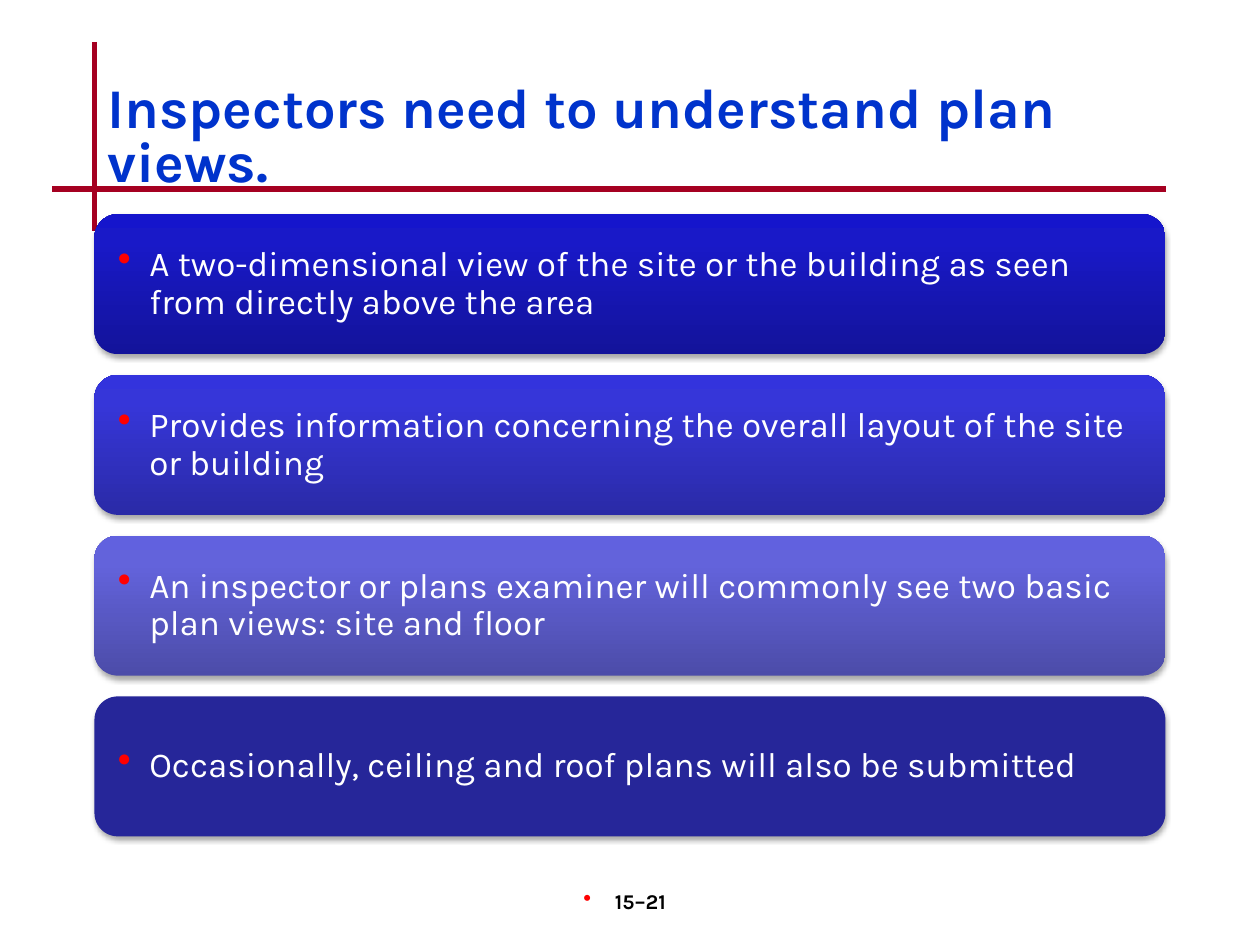
import lxml.etree
import pptx
import pptx.dml.color
import pptx.enum.shapes
import pptx.enum.text
import pptx.oxml
import pptx.oxml.ns
import pptx.util

Pt = pptx.util.Pt
ALIGN = pptx.enum.text.PP_ALIGN
ANCHOR = pptx.enum.text.MSO_ANCHOR
NAMESPACE = pptx.oxml.ns.nsdecls("a")

FONT = "Karla"
RULE_RED = "A50021"
BULLET_RED = "FF0000"
LEFT, WIDTH = 54, 612
CARD_TOP, CARD_HEIGHT, CARD_PITCH = 122.4, 80, 91.85

# Each card has its text and its colours from bottom to top.
CARDS = [
    ("A two-dimensional view of the site or the building as seen from directly above the area",
     ["13139A", "1919C8", "1515CC"]),
    ("Provides information concerning the overall layout of the site or building",
     ["2A2AA7", "3636D9", "3333DD"]),
    ("An inspector or plans examiner will commonly see two basic plan views: site and floor",
     ["4C4CA9", "6363DB", "6161DF"]),
    ("Occasionally, ceiling and roof plans will also be submitted", ["262699"]),
]


def rgb(value):
    return pptx.dml.color.RGBColor.from_string(value)


def add_bullet(para, indent):
    properties = para._p.get_or_add_pPr()
    properties.set("marL", str(Pt(indent)))
    properties.set("indent", str(-Pt(indent)))
    for xml in (
        f'<a:buClr {NAMESPACE}><a:srgbClr val="{BULLET_RED}"/></a:buClr>',
        f'<a:buSzPct {NAMESPACE} val="110000"/>',
        f'<a:buChar {NAMESPACE} char="•"/>',
    ):
        properties.append(pptx.oxml.parse_xml(xml))


def write_text(shape, text, size, color, bold=False, align=ALIGN.LEFT,
               anchor=ANCHOR.TOP, spacing=None, bullet_indent=None,
               margins=(7.2, 3.6)):
    """Fill a shape with one paragraph; margins are horizontal and vertical."""
    frame = shape.text_frame
    frame.word_wrap = True
    frame.auto_size = pptx.enum.text.MSO_AUTO_SIZE.NONE
    frame.vertical_anchor = anchor
    frame.margin_left = frame.margin_right = Pt(margins[0])
    frame.margin_top = frame.margin_bottom = Pt(margins[1])
    para = frame.paragraphs[0]
    para.alignment = align
    para.space_before = Pt(0)
    if spacing:
        para.line_spacing = spacing
    if bullet_indent:
        add_bullet(para, bullet_indent)
    span = para.add_run()
    span.text = text
    span.font.name = FONT
    span.font.size = Pt(size)
    span.font.bold = bold
    span.font.color.rgb = rgb(color)


def add_rule(page, start, end):
    rule = page.shapes.add_connector(
        pptx.enum.shapes.MSO_CONNECTOR.STRAIGHT, *map(Pt, start + end))
    rule.line.color.rgb = rgb(RULE_RED)
    rule.line.width = Pt(3)
    lxml.etree.SubElement(rule._element.spPr, pptx.oxml.ns.qn("a:effectLst"))


def add_title(page, text):
    title = page.shapes.title
    title.left, title.top, title.width, title.height = map(Pt, (LEFT, 42, WIDTH, 72))
    write_text(title, text, 32, "0033CC", bold=True, anchor=ANCHOR.BOTTOM, spacing=0.8)


def fill_gradient(shape, colors):
    stops = "".join(
        f'<a:gs pos="{position}"><a:srgbClr val="{color}"/></a:gs>'
        for position, color in zip((0, 80000, 100000), colors))
    gradient = pptx.oxml.parse_xml(
        f'<a:gradFill {NAMESPACE} rotWithShape="1"><a:gsLst>{stops}</a:gsLst>'
        '<a:lin ang="16200000" scaled="0"/></a:gradFill>')
    shape._element.spPr.find(pptx.oxml.ns.qn("a:prstGeom")).addnext(gradient)


def add_soft_shadow(shape):
    shape.shadow.inherit = False
    effects = shape._element.spPr.find(pptx.oxml.ns.qn("a:effectLst"))
    effects.append(pptx.oxml.parse_xml(
        f'<a:outerShdw {NAMESPACE} blurRad="{Pt(3.1)}" dist="{Pt(1.8)}" dir="5400000" '
        'rotWithShape="0"><a:srgbClr val="000000"><a:alpha val="35000"/></a:srgbClr>'
        '</a:outerShdw>'))


def add_card(page, top, text, colors):
    card = page.shapes.add_shape(
        pptx.enum.shapes.MSO_SHAPE.ROUNDED_RECTANGLE,
        *map(Pt, (LEFT, top, WIDTH, CARD_HEIGHT)))
    if len(colors) > 1:
        fill_gradient(card, colors)
    else:
        card.fill.solid()
        card.fill.fore_color.rgb = rgb(colors[0])
    card.line.fill.background()
    add_soft_shadow(card)
    write_text(card, text, 20, "FFFFFF", anchor=ANCHOR.MIDDLE, spacing=0.9,
               bullet_indent=18, margins=(9.5, 9.5))


def add_page_number(page, text):
    box = page.shapes.add_textbox(*map(Pt, (282, 504, 150, 36)))
    write_text(box, text, 12, "000000", bold=True, align=ALIGN.CENTER, bullet_indent=18)


def main():
    deck = pptx.Presentation()
    deck.slide_width, deck.slide_height = Pt(720), Pt(540)
    page = deck.slides.add_slide(deck.slide_layouts[5])
    add_rule(page, (LEFT, 24), (LEFT, 132))
    add_rule(page, (30, 108), (666, 108))
    add_title(page, "Inspectors need to understand plan views.")
    for index, (text, colors) in enumerate(CARDS):
        add_card(page, CARD_TOP + index * CARD_PITCH, text, colors)
    add_page_number(page, "15–21")
    deck.save("out.pptx")


if __name__ == "__main__":
    main()
